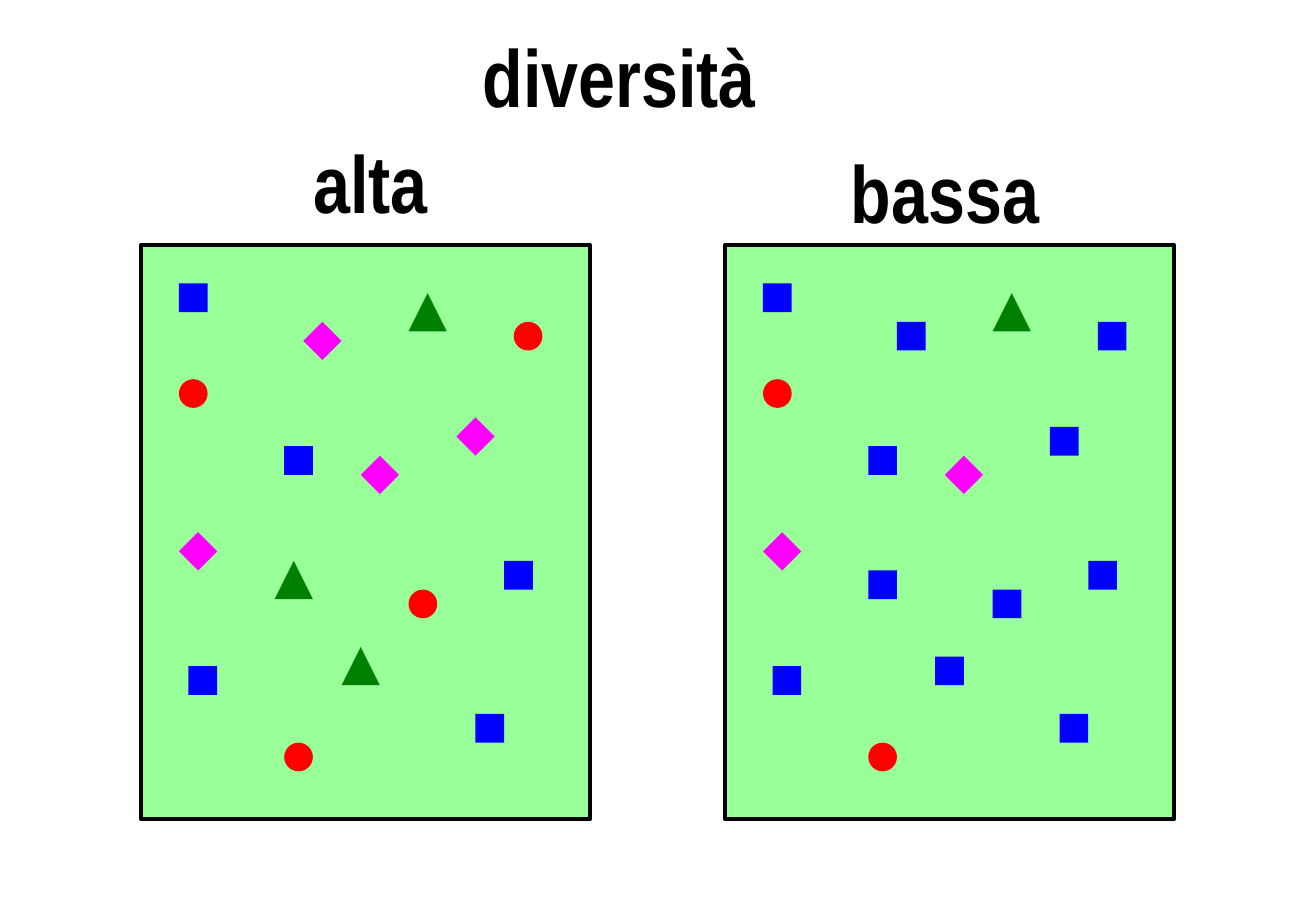
from lxml import etree
from pptx import Presentation
from pptx.dml.color import RGBColor
from pptx.enum import shapes, text
from pptx.oxml.ns import qn
from pptx.util import Pt

KIND = shapes.MSO_SHAPE
COLORS = {"field": "99FF99", "ink": "000000", "square": "0000FF",
          "disc": "FF0000", "diamond": "FF00FF", "triangle": "008000"}

# Species: preset shape and size in grid steps
SPECIES = {"square": (KIND.RECTANGLE, 3), "disc": (KIND.OVAL, 3),
           "diamond": (KIND.DIAMOND, 4),
           "triangle": (KIND.ISOSCELES_TRIANGLE, 4)}

# Places in grid steps from the top left corner of a field
SHARED = {"square": [(4, 4), (15, 21), (38, 33), (5, 44), (35, 49)],
          "disc": [(4, 14), (15, 52)],
          "diamond": [(23, 22), (4, 30)],
          "triangle": [(28, 5)]}
HIGH = {"diamond": [(17, 8), (33, 18)],
        "triangle": [(14, 33), (21, 42)],
        "disc": [(39, 8), (28, 36)]}
LOW = {"square": [(18, 8), (39, 8), (34, 19), (15, 34), (28, 36), (22, 43)]}

STEP = 5.67
TOP = 145.4
FIELDS = [(83.4, HIGH), (429.6, LOW)]
LABELS = [("diversità", 236.9, 25.9), ("alta", 89.3, 88.6),
          ("bassa", 429.8, 94.3)]

deck = Presentation()
deck.slide_width, deck.slide_height = Pt(780), Pt(540)
slide = deck.slides.add_slide(deck.slide_layouts[6])


def color(name):
    return RGBColor.from_string(COLORS[name])


def add_form(kind, left, top, width, height, fill, line=None):
    form = slide.shapes.add_shape(kind, Pt(left), Pt(top), Pt(width), Pt(height))
    form.shadow.inherit = False
    form.fill.solid()
    form.fill.fore_color.rgb = color(fill)
    if line:
        form.line.color.rgb = color("ink")
        form.line.width = Pt(line)
    else:
        form.line.fill.background()


def add_text(words, left, top, width=260.6, height=50.4, size=48,
             font="Arial Narrow", ink="ink", bold=True, spacing=0.75, before=50):
    """Add a centred label; before is the space above in percent of a line."""
    box = slide.shapes.add_textbox(Pt(left), Pt(top), Pt(width), Pt(height))
    frame = box.text_frame
    frame.word_wrap = True
    frame.auto_size = text.MSO_AUTO_SIZE.SHAPE_TO_FIT_TEXT
    para = frame.paragraphs[0]
    para.alignment = text.PP_ALIGN.CENTER
    para.line_spacing = spacing
    para.space_before = Pt(0)
    gap = para._p.pPr.find(qn("a:spcBef"))
    gap.remove(gap[0])
    etree.SubElement(gap, qn("a:spcPct"), val=str(before * 1000))
    run = para.add_run()
    run.text = words
    run.font.name, run.font.size, run.font.bold = font, Pt(size), bold
    run.font.color.rgb = color(ink)


for left, extra in FIELDS:
    add_form(KIND.RECTANGLE, left, TOP, 47 * STEP, 60 * STEP, "field", line=2.25)
    for group in (SHARED, extra):
        for name, spots in group.items():
            kind, steps = SPECIES[name]
            for col, row in spots:
                add_form(kind, left + col * STEP, TOP + row * STEP,
                         steps * STEP, steps * STEP, name)

for words, left, top in LABELS:
    add_text(words, left, top)

deck.save("out.pptx")
